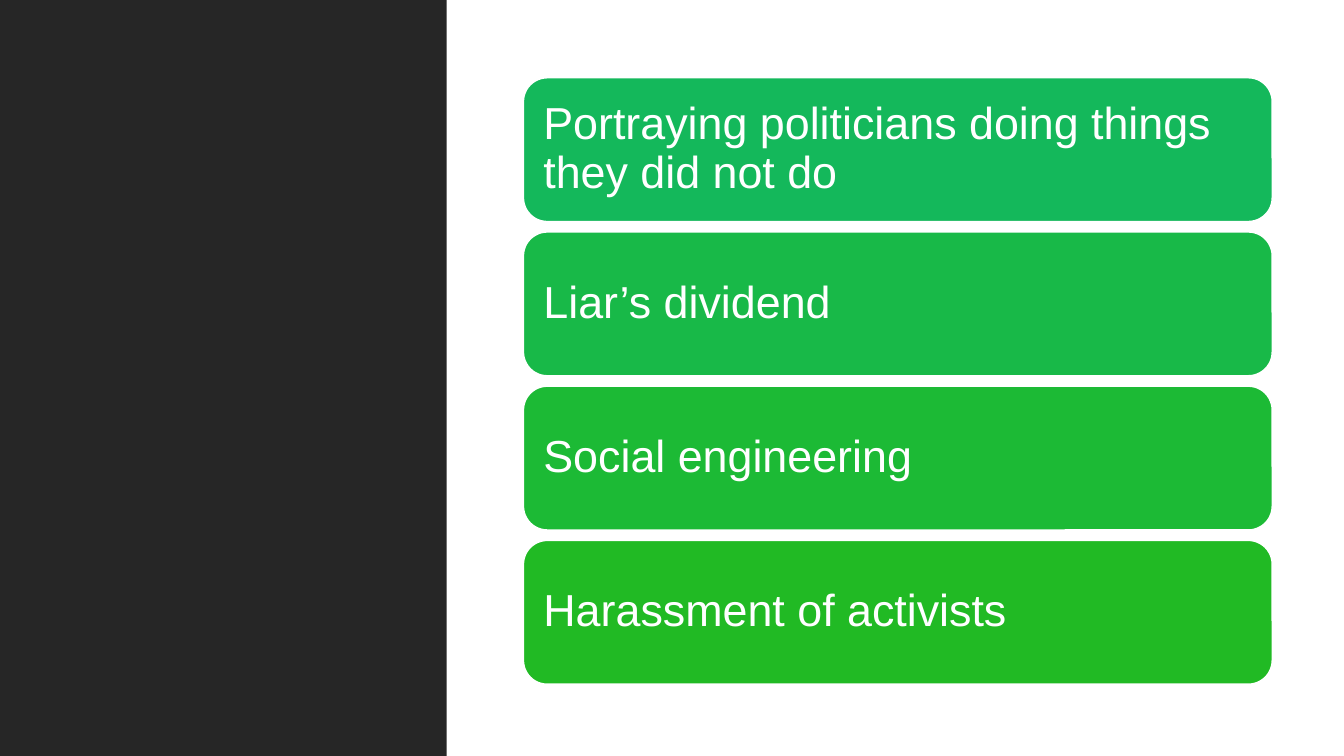
"""Build a slide listing four deepfake risks beside a dark side panel."""
from pptx import Presentation
from pptx import util as u
from pptx.dml.color import RGBColor
from pptx.enum import shapes, text

RISKS = [
    ("Portraying politicians doing things they did not do", "14B85B"),
    ("Liar’s dividend", "18B948"),
    ("Social engineering", "1CBA35"),
    ("Harassment of activists", "21BA24"),
]
HUES = {"panel": "262626", "white": "FFFFFF"}
SIZE = (13.33, 7.5)
PANEL = 4.43
LEFT, TOP, WIDE, HIGH, STEP = 5.19, 0.77, 7.43, 1.43, 1.53
PAD = u.Inches(0.13)
FRAME = {
    "word_wrap": True,
    "vertical_anchor": text.MSO_ANCHOR.MIDDLE,
    "margin_left": PAD,
    "margin_right": PAD,
    "margin_top": PAD,
    "margin_bottom": PAD,
}
PARA = {"alignment": text.PP_ALIGN.LEFT, "line_spacing": 0.9}
FONT = {"name": "Arial", "size": u.Pt(32)}


def style(item, form):
    for key, val in form.items():
        setattr(item, key, val)


def block(slide, kind, box, hue):
    shape = slide.shapes.add_shape(kind, *map(u.Inches, box))
    shape.shadow.inherit = False
    shape.fill.solid()
    shape.fill.fore_color.rgb = RGBColor.from_string(hue)
    shape.line.fill.background()
    return shape


def card(slide, row, words, hue):
    box = (LEFT, TOP + row * STEP, WIDE, HIGH)
    shape = block(slide, shapes.MSO_SHAPE.ROUNDED_RECTANGLE, box, hue)
    white = RGBColor.from_string(HUES["white"])
    shape.line.color.rgb = white
    shape.line.width = u.Pt(1.25)
    frame = shape.text_frame
    frame.text = words
    para = frame.paragraphs[0]
    style(frame, FRAME)
    style(para, PARA)
    style(para.runs[0].font, FONT)
    para.runs[0].font.color.rgb = white


def main():
    deck = Presentation()
    deck.slide_width, deck.slide_height = map(u.Inches, SIZE)
    slide = deck.slides.add_slide(deck.slide_layouts[6])
    block(slide, shapes.MSO_SHAPE.RECTANGLE, (0, 0, PANEL, SIZE[1]), HUES["panel"])
    for row, (words, hue) in enumerate(RISKS):
        card(slide, row, words, hue)
    deck.save("out.pptx")


if __name__ == "__main__":
    main()
